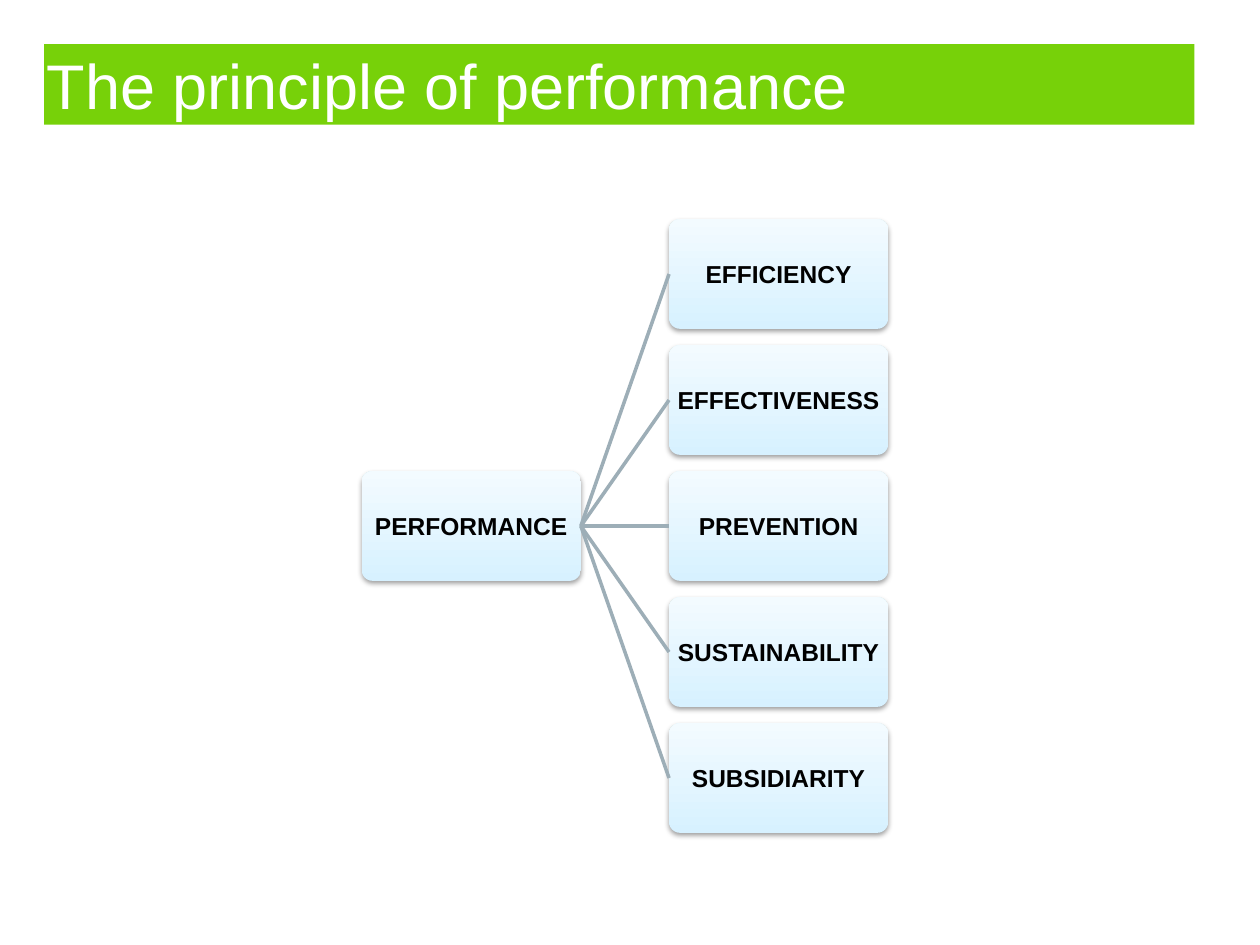
from lxml.etree import SubElement
from pptx import Presentation
from pptx.dml.color import RGBColor
from pptx.enum.shapes import MSO_CONNECTOR, MSO_SHAPE
from pptx.enum.text import MSO_ANCHOR, PP_ALIGN
from pptx.oxml.ns import qn
from pptx.util import Inches, Pt

GREEN = RGBColor(0x77, 0xD1, 0x09)
WHITE = RGBColor(0xFF, 0xFF, 0xFF)
BLACK = RGBColor(0, 0, 0)
GREY = RGBColor(0x9D, 0xAE, 0xB7)
DEEP = RGBColor(0xD7, 0xF1, 0xFF)
PALE = RGBColor(0xF3, 0xFB, 0xFF)
GOALS = ["EFFICIENCY", "EFFECTIVENESS", "PREVENTION", "SUSTAINABILITY", "SUBSIDIARITY"]


def write(shape, text, size, color, bold=False, align=PP_ALIGN.LEFT, inset=0.02, font="Arial"):
    frame = shape.text_frame
    frame.word_wrap = True
    frame.vertical_anchor = MSO_ANCHOR.MIDDLE
    frame.margin_left = frame.margin_right = Inches(inset)
    frame.margin_top = frame.margin_bottom = 0
    para = frame.paragraphs[0]
    para.alignment = align
    run = para.add_run()
    run.text = text
    run.font.name = font
    run.font.size = Pt(size)
    run.font.bold = bold
    run.font.color.rgb = color


class Board:
    """Holds the box style and the slide being drawn."""

    wide, high = 1.74, 0.87

    def __init__(self, slide):
        self.slide = slide

    def shape(self, kind, left, top, width, height):
        shape = self.slide.shapes.add_shape(
            kind, Inches(left), Inches(top), Inches(width), Inches(height))
        shape.shadow.inherit = False
        shape.line.fill.background()
        return shape

    def title(self, text):
        bar = self.shape(MSO_SHAPE.RECTANGLE, 0.35, 0.35, 9.13, 0.64)
        bar.fill.solid()
        bar.fill.fore_color.rgb = GREEN
        write(bar, text, 36, WHITE)

    def box(self, text, left, top):
        box = self.shape(MSO_SHAPE.ROUNDED_RECTANGLE, left, top, self.wide, self.high)
        box.adjustments[0] = 0.1
        box.fill.gradient()
        box.fill.gradient_angle = 90
        for stop, color in zip(box.fill.gradient_stops, (DEEP, PALE)):
            stop.color.rgb = color
        self.shade(box)
        write(box, text, 14, BLACK, bold=True, align=PP_ALIGN.CENTER, inset=0.03)
        return box

    def shade(self, box):
        effects = box._element.spPr.find(qn("a:effectLst"))
        shadow = SubElement(effects, qn("a:outerShdw"), blurRad=str(Pt(3.1)),
                            dist=str(Pt(1.6)), dir="5400000", rotWithShape="0")
        color = SubElement(shadow, qn("a:srgbClr"), val=str(BLACK))
        SubElement(color, qn("a:alpha"), val="38000")

    def link(self, start, end):
        line = self.slide.shapes.add_connector(MSO_CONNECTOR.STRAIGHT, 0, 0, 0, 0)
        line.begin_connect(start, 3)
        line.end_connect(end, 1)
        line.line.color.rgb = GREY
        line.line.width = Pt(2)
        SubElement(line._element.spPr, qn("a:effectLst"))


def main():
    deck = Presentation()
    deck.slide_width, deck.slide_height = Inches(10), Inches(7.5)
    board = Board(deck.slides.add_slide(deck.slide_layouts[6]))
    board.title("The principle of performance")
    root = board.box("PERFORMANCE", 2.87, 3.74)
    for row, goal in enumerate(GOALS):
        board.link(root, board.box(goal, 5.31, 1.74 + row))
    deck.save("out.pptx")


if __name__ == "__main__":
    main()
